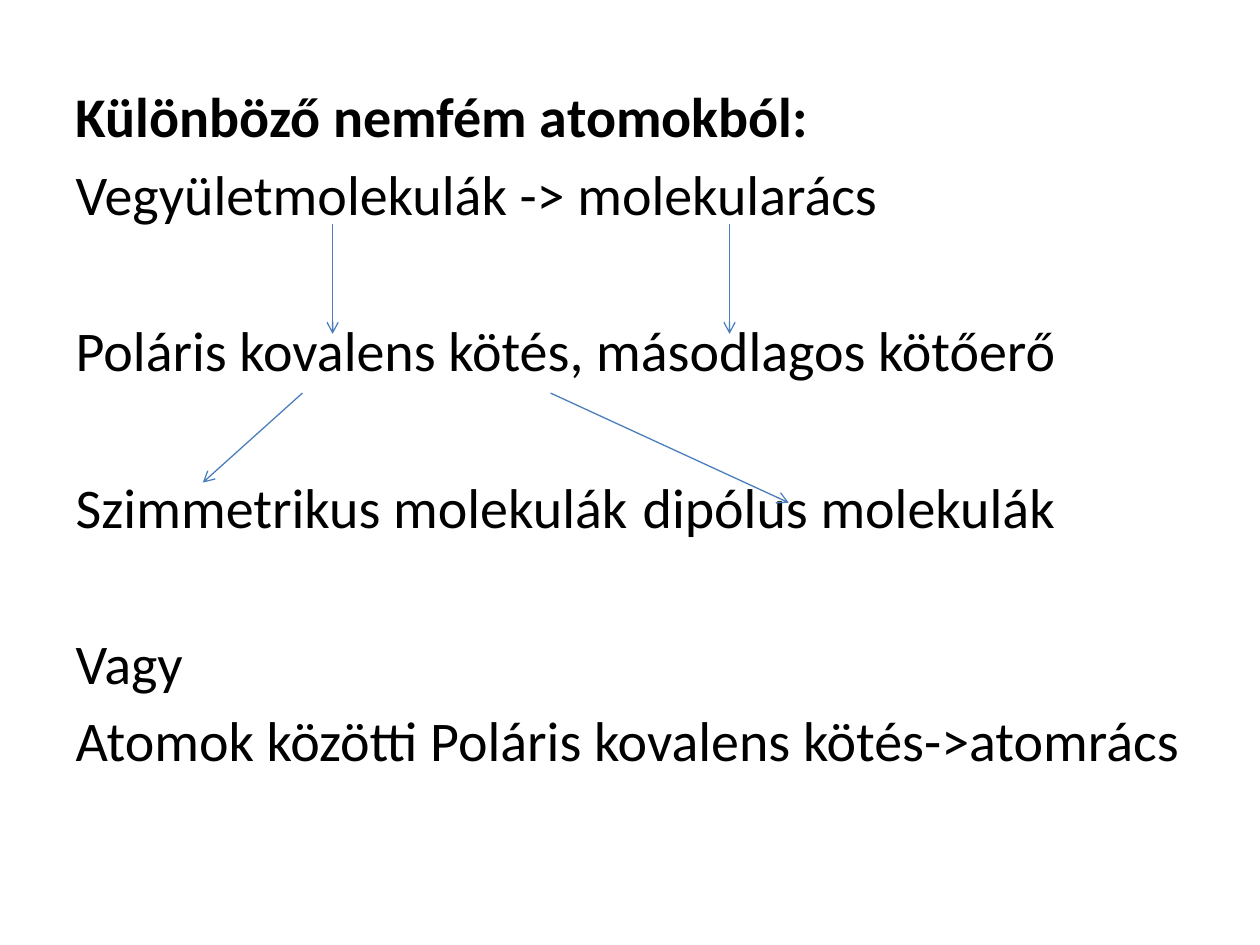
from typing import NamedTuple

from lxml import etree
from pptx import Presentation
from pptx import util as u
from pptx.dml.color import RGBColor
from pptx.enum import shapes, text
from pptx.oxml.ns import qn

WIDTH, HEIGHT = 10, 7.5
FONT, SIZE = "Calibri", 32
LINE_GAP = 5.9    # points before each paragraph
EMPTY_ROW = 45    # points taken by one skipped row
INK, ARROW_BLUE = "000000", "4B7EBC"


class Line(NamedTuple):
    words: str
    bold: bool = False
    rows_skipped: int = 0


class Arrow(NamedTuple):
    """Start and end as shares of the slide's width and height."""
    start: tuple[float, float]
    end: tuple[float, float]


LINES = [
    Line("Különböző nemfém atomokból:", bold=True),
    Line("Vegyületmolekulák -> molekularács"),
    Line("Poláris kovalens kötés, másodlagos kötőerő", rows_skipped=1),
    Line("Szimmetrikus molekulák\tdipólus molekulák", rows_skipped=1),
    Line("Vagy", rows_skipped=1),
    Line("Atomok közötti Poláris kovalens kötés->atomrács"),
]

ARROWS = [
    Arrow((2.64 / WIDTH, 1.78 / HEIGHT), (2.64 / WIDTH, 2.65 / HEIGHT)),
    Arrow((5.79 / WIDTH, 1.78 / HEIGHT), (5.79 / WIDTH, 2.65 / HEIGHT)),
    Arrow((2.40 / WIDTH, 3.12 / HEIGHT), (1.61 / WIDTH, 3.83 / HEIGHT)),
    Arrow((4.37 / WIDTH, 3.12 / HEIGHT), (6.26 / WIDTH, 3.99 / HEIGHT)),
]


def colour(value: str) -> RGBColor:
    return RGBColor.from_string(value)


def write(para, words: str, *, bold: bool = False, before: float = 0,
          tab: float = 5) -> None:
    """Fill a paragraph without a bullet, with one tab stop in inches."""
    span = para.add_run()
    span.text = words
    span.font.name, span.font.size = FONT, u.Pt(SIZE)
    span.font.bold = bold
    span.font.color.rgb = colour(INK)
    para.space_before = u.Pt(before)
    settings = para._p.get_or_add_pPr()
    settings.set("marL", "0")
    settings.set("indent", "0")
    etree.SubElement(settings, qn("a:buNone"))
    if "\t" in words:
        stops = etree.SubElement(settings, qn("a:tabLst"))
        etree.SubElement(stops, qn("a:tab"), pos=str(u.Inches(tab)), algn="l")


def draw_arrow(page, arrow: Arrow) -> None:
    ends = [u.Inches(share * side) for point in arrow
            for share, side in zip(point, (WIDTH, HEIGHT))]
    connector = page.shapes.add_connector(shapes.MSO_CONNECTOR.STRAIGHT, *ends)
    connector.line.color.rgb = colour(ARROW_BLUE)
    connector.line.width = u.Pt(0.75)
    etree.SubElement(connector.line._get_or_add_ln(), qn("a:tailEnd"), type="arrow")
    etree.SubElement(connector._element.spPr, qn("a:effectLst"))


def main() -> None:
    deck = Presentation()
    deck.slide_width, deck.slide_height = u.Inches(WIDTH), u.Inches(HEIGHT)
    page = deck.slides.add_slide(deck.slide_layouts.get_by_name("Title and Content"))

    # The page has body text only
    title = page.shapes.title._element
    title.getparent().remove(title)

    # Body text
    box = page.placeholders[1]
    box.left, box.top = u.Inches(0.5), u.Inches(0.6)
    box.width, box.height = u.Inches(9), u.Inches(6.1)
    frame = box.text_frame
    frame.word_wrap = True
    frame.auto_size = text.MSO_AUTO_SIZE.NONE
    frame.vertical_anchor = text.MSO_ANCHOR.TOP
    for index, line in enumerate(LINES):
        para = frame.add_paragraph() if index else frame.paragraphs[0]
        gap = LINE_GAP + line.rows_skipped * EMPTY_ROW if index else 0
        write(para, line.words, bold=line.bold, before=gap)

    # Arrows between the statements
    for arrow in ARROWS:
        draw_arrow(page, arrow)

    deck.save("out.pptx")


if __name__ == "__main__":
    main()
